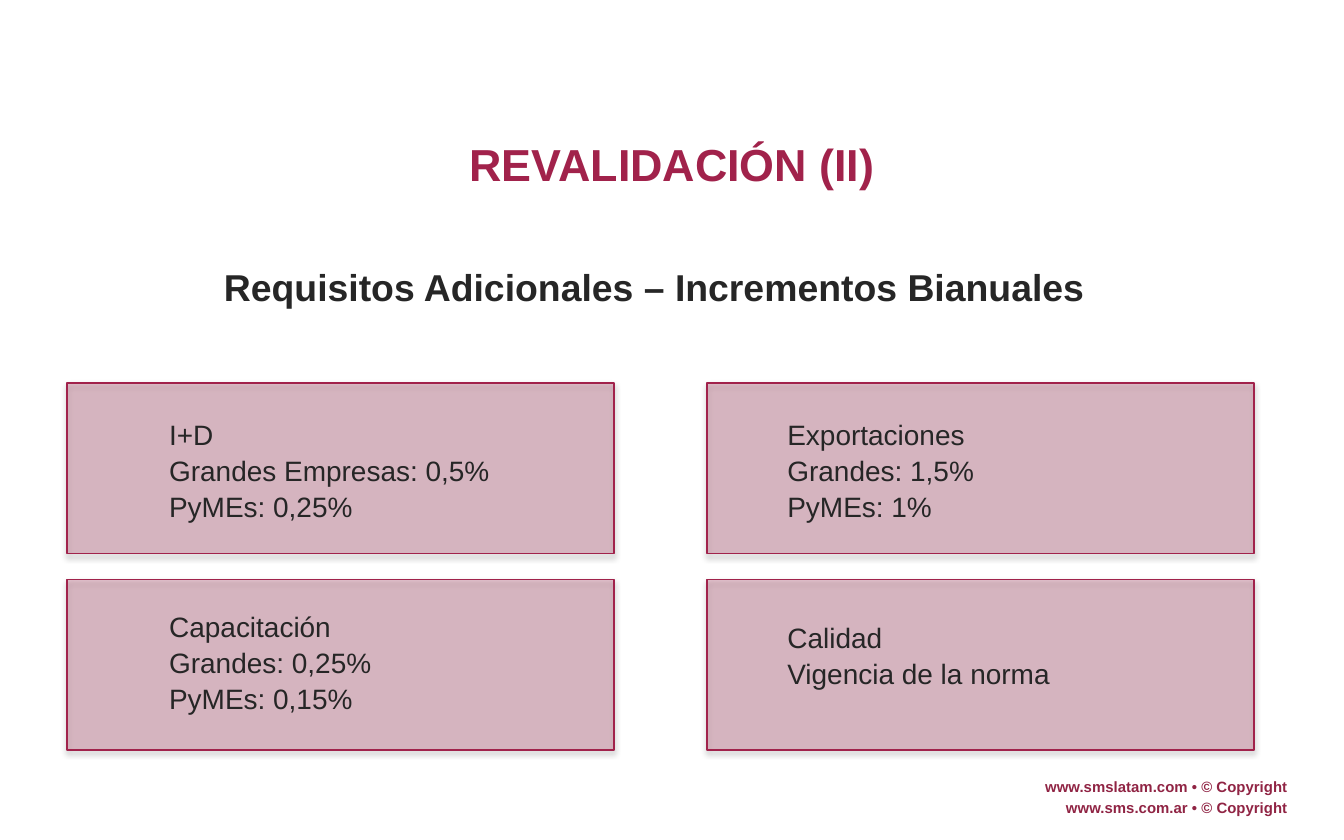
from lxml import etree
from pptx import Presentation
from pptx import util as u
from pptx.dml import color
from pptx.enum import shapes, text
from pptx.oxml import ns

COLORS = {"wine": "A1224B", "footer": "902444", "ink": "262626", "shadow": "000000"}
ALIGN = text.PP_ALIGN


def format_text(box, lines, size, tone, bold=False, align=ALIGN.LEFT, indent=0, spacing=None, after=None):
    frame = box.text_frame
    frame.word_wrap = True
    frame.auto_size = text.MSO_AUTO_SIZE.NONE
    frame.vertical_anchor = text.MSO_ANCHOR.TOP
    frame.text = "\n".join(lines)
    for para in frame.paragraphs:
        para.alignment = align
        para.line_spacing = spacing
        para._p.get_or_add_pPr().set("marL", str(u.Inches(indent)))
        for span in para.runs:
            span.font.name = "Arial"
            span.font.size = u.Pt(size)
            span.font.bold = bold
            span.font.color.rgb = color.RGBColor.from_string(COLORS[tone])
    if after:
        frame.paragraphs[-1].space_after = u.Pt(after)


def add_element(parent, tag, **attributes):
    return etree.SubElement(parent, ns.qn(tag), attributes)


deck = Presentation()
deck.slide_width, deck.slide_height = u.Inches(10), u.Inches(6.25)
page = deck.slides.add_slide(deck.slide_layouts[5])

for top, line in [(5.74, "www.smslatam.com • © Copyright"), (5.89, "www.sms.com.ar • © Copyright")]:
    box = page.shapes.add_textbox(u.Inches(7.54), u.Inches(top), u.Inches(2.14), u.Inches(0.24))
    format_text(box, [line], 8, "footer", bold=True, align=ALIGN.RIGHT)

title = page.shapes.title
title.left, title.top, title.width, title.height = map(u.Inches, (0.5, 0.97, 9, 1.04))
format_text(title, ["REVALIDACIÓN (II)"], 24, "wine", bold=True, align=ALIGN.CENTER)

subtitle = page.shapes.add_textbox(u.Inches(1.01), u.Inches(1.89), u.Inches(7.22), u.Inches(1.04))
format_text(subtitle, ["Requisitos Adicionales – Incrementos Bianuales"], 20, "ink",
            bold=True, align=ALIGN.CENTER, indent=0.5, spacing=1.07)

LEFT, RIGHT = 0.5, 5.26
UPPER, LOWER = 2.85, 4.31
requirements = [
    (LEFT, UPPER, 0.66, 3.04, ALIGN.LEFT, ["I+D", "Grandes Empresas: 0,5%", "PyMEs: 0,25%"]),
    (RIGHT, UPPER, 5.26, 3.04, ALIGN.JUSTIFY, ["Exportaciones", "Grandes: 1,5%", "PyMEs: 1%"]),
    (LEFT, LOWER, 0.66, 4.47, ALIGN.JUSTIFY, ["Capacitación", "Grandes: 0,25%", "PyMEs: 0,15%"]),
    (RIGHT, LOWER, 5.26, 4.55, ALIGN.JUSTIFY, ["Calidad", "Vigencia de la norma"]),
]
for left, top, text_left, text_top, align, lines in requirements:
    card = page.shapes.add_shape(shapes.MSO_SHAPE.RECTANGLE, u.Inches(left), u.Inches(top),
                                 u.Inches(4.07), u.Inches(1.27))
    wine = color.RGBColor.from_string(COLORS["wine"])
    card.fill.solid()
    card.fill.fore_color.rgb = wine
    card.line.color.rgb = wine
    card.line.width = u.Pt(0.75)
    properties = card._element.spPr
    fill_color = properties.find(ns.qn("a:solidFill")).find(ns.qn("a:srgbClr"))
    add_element(fill_color, "a:alpha", val="26000")

    card.shadow.inherit = False
    shadow = add_element(properties.find(ns.qn("a:effectLst")), "a:outerShdw",
                         blurRad=str(u.Pt(3.1)), dist=str(u.Pt(1.8)), dir="5400000", rotWithShape="0")
    shadow_color = add_element(shadow, "a:srgbClr", val=COLORS["shadow"])
    add_element(shadow_color, "a:alpha", val="35000")

    box = page.shapes.add_textbox(u.Inches(text_left), u.Inches(text_top), u.Inches(3.35),
                                  u.Inches(0.09 + 0.27 * len(lines)))
    format_text(box, lines, 15, "ink", align=align, indent=0.5, spacing=1.07, after=8)

deck.save("out.pptx")
